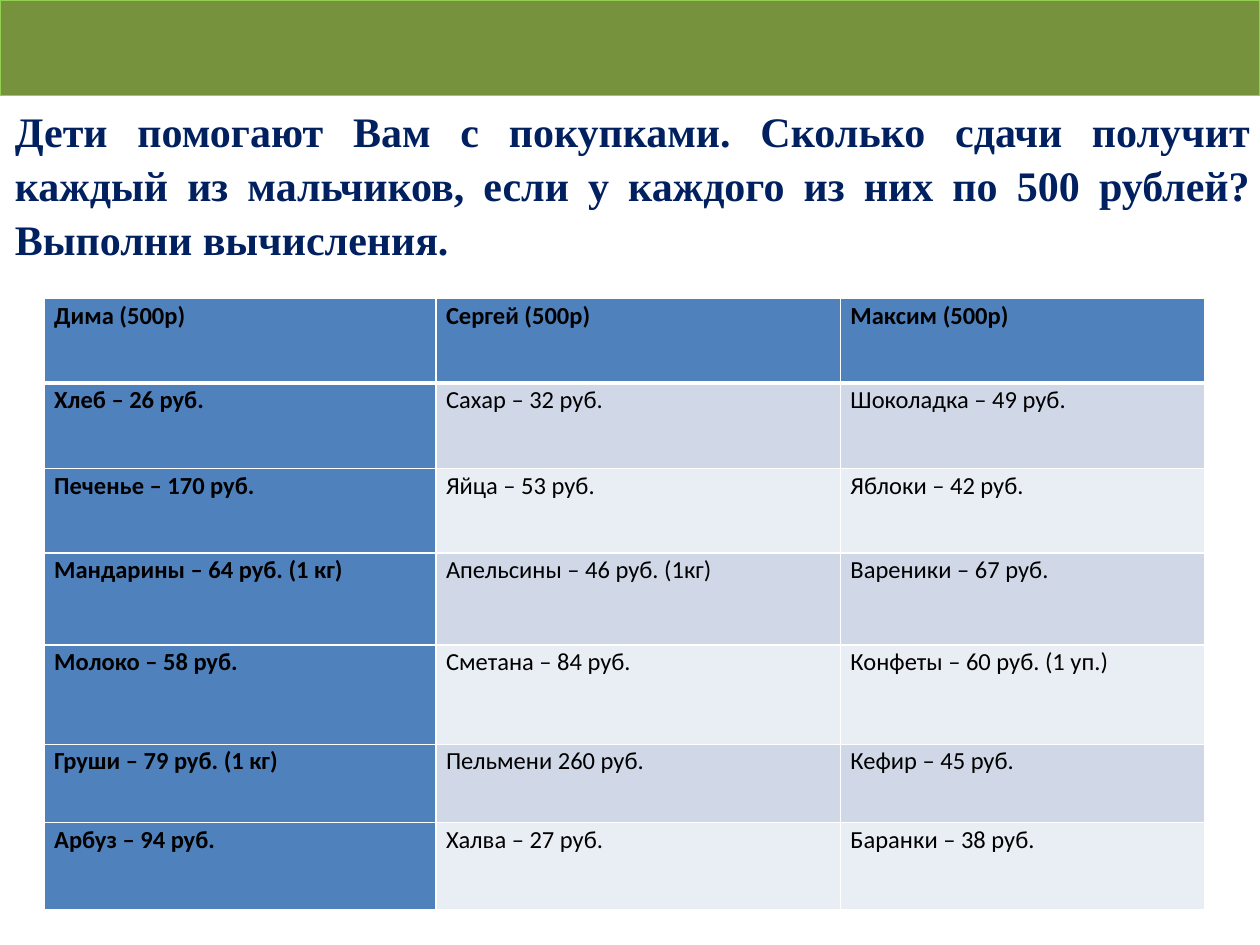
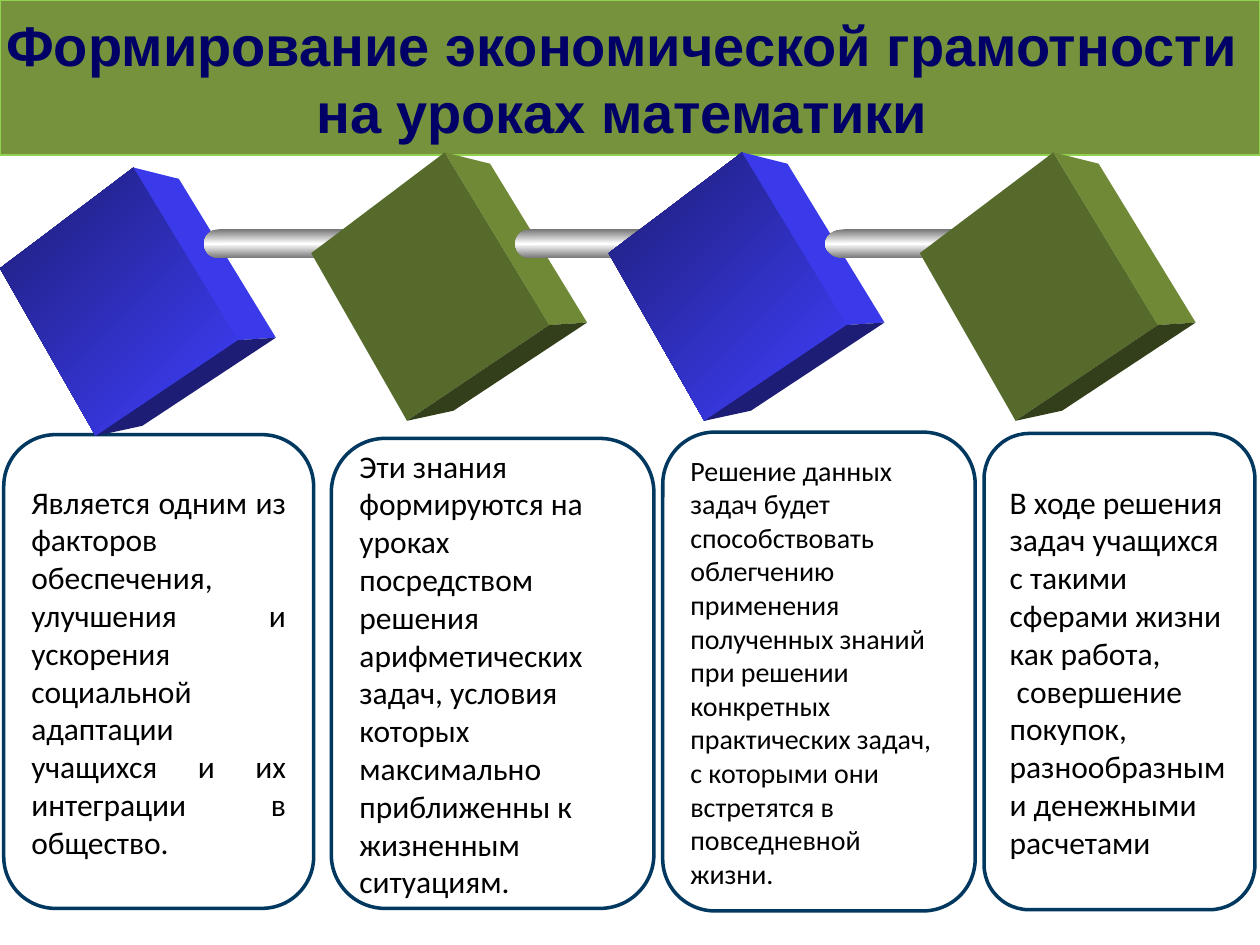
from copy import deepcopy

from lxml import etree
from pptx import Presentation
from pptx.dml.color import RGBColor
from pptx.enum.shapes import MSO_SHAPE
from pptx.enum.text import MSO_ANCHOR, PP_ALIGN
from pptx.oxml.ns import qn
from pptx.util import Inches, Pt

RECT, ROUNDED, ELLIPSE = MSO_SHAPE.RECTANGLE, MSO_SHAPE.ROUNDED_RECTANGLE, MSO_SHAPE.OVAL
LEFT, CENTER, JUSTIFY = PP_ALIGN.LEFT, PP_ALIGN.CENTER, PP_ALIGN.JUSTIFY
MIDDLE = MSO_ANCHOR.MIDDLE

WHITE, BLACK = "FFFFFF", "000000"
BAND_GREEN, BAND_EDGE = "76923C", "92D050"
TASK_NAVY, TITLE_NAVY, CARD_EDGE = "002060", "000066", "003860"
TABLE_BLUE, ROW_TINTS = "4F81BD", ("D0D8E8", "E9EDF4")
METAL = ("767676", "FFFFFF", "767676")
# Colours of the front, right and bottom faces
BLUE_CUBE = (("1D1D76", "3F3FFF"), "3A3AEB", "1D1D76")
GREEN_CUBE = ("566B2B", "6F8936", "333F1A")
CUBE_FACES = (
    ((1.06, 0), (0, 0.8), (0.76, 2.13), (1.89, 1.37)),
    ((1.06, 0), (1.42, 0.09), (2.19, 1.35), (1.89, 1.37)),
    ((1.89, 1.37), (2.19, 1.35), (1.13, 2.05), (0.76, 2.13)),
)

TASK = ("Дети помогают Вам с покупками. Сколько сдачи получит каждый из мальчиков, "
        "если у каждого из них по 500 рублей? Выполни вычисления.")
PURCHASES = (
    ("Дима (500р)", "Сергей (500р)", "Максим (500р)"),
    ("Хлеб – 26 руб.", "Сахар – 32 руб.", "Шоколадка – 49 руб."),
    ("Печенье – 170 руб.", "Яйца – 53 руб.", "Яблоки – 42 руб."),
    ("Мандарины – 64 руб. (1 кг)", "Апельсины – 46 руб. (1кг)", "Вареники – 67 руб."),
    ("Молоко – 58 руб.", "Сметана – 84 руб.", "Конфеты – 60 руб. (1 уп.)"),
    ("Груши – 79 руб. (1 кг)", "Пельмени 260 руб.", "Кефир – 45 руб."),
    ("Арбуз – 94 руб.", "Халва – 27 руб.", "Баранки – 38 руб."),
)
COLUMN_WIDTHS = (3.11, 3.21, 2.89)
ROW_HEIGHTS = (0.67, 0.68, 0.67, 0.73, 0.79, 0.62, 0.69)

TITLE = ("Формирование экономической грамотности ", "на уроках математики ")
# Box, text size, alignment, paragraphs
CARDS = (
    ((0.03, 3.45, 2.46, 3.76), 18, JUSTIFY,
     ("Является одним из факторов обеспечения, улучшения и ускорения социальной "
      "адаптации учащихся и их интеграции в общество.",)),
    ((2.63, 3.48, 2.56, 3.73), 18, LEFT,
     ("Эти знания формируются на уроках посредством решения арифметических задач, "
      "условия которых максимально приближенны к жизненным ситуациям.",)),
    ((5.26, 3.43, 2.48, 3.8), 16, LEFT,
     ("Решение данных задач будет способствовать облегчению применения полученных "
      "знаний при решении конкретных практических задач, с которыми они встретятся "
      "в повседневной жизни.",)),
    ((7.81, 3.44, 2.15, 3.78), 18, LEFT,
     ("В ходе решения задач учащихся с такими сферами жизни как работа,",
      " совершение покупок, разнообразными денежными расчетами")),
)
CUBES = ((0, 1.33, BLUE_CUBE), (2.47, 1.21, GREEN_CUBE),
         (4.83, 1.21, BLUE_CUBE), (7.3, 1.21, GREEN_CUBE))
# Left edge, cap width, tube length
RODS = ((1.62, 0.23, 1.11), (4.09, 0.23, 1.11), (6.55, 0.3, 1.45))


def color(hex_code):
    return RGBColor.from_string(hex_code)


def fill_gradient(shape, colors, angle):
    shape.fill.gradient()
    shape.fill.gradient_angle = angle
    stop_list = shape._element.spPr.find(".//" + qn("a:gsLst"))
    while len(stop_list) < len(colors):
        stop_list.append(deepcopy(stop_list[0]))
    for i, (stop, hex_code) in enumerate(zip(shape.fill.gradient_stops, colors)):
        stop.position = i / (len(colors) - 1)
        stop.color.rgb = color(hex_code)


def paint(shape, fill, edge=None, edge_width=0.75, angle=270):
    """Fill with one colour, or with a gradient when given several."""
    shape.shadow.inherit = False
    if isinstance(fill, str):
        shape.fill.solid()
        shape.fill.fore_color.rgb = color(fill)
    else:
        fill_gradient(shape, fill, angle)
    if edge:
        shape.line.color.rgb = color(edge)
        shape.line.width = Pt(edge_width)
    else:
        shape.line.fill.background()


def add_painted(slide, kind, box, fill, edge=None, edge_width=0.75):
    shape = slide.shapes.add_shape(kind, *map(Inches, box))
    paint(shape, fill, edge, edge_width)
    return shape


def write(frame, texts, font, size, hex_code, bold=False, align=LEFT, spacing=None):
    for i, text in enumerate(texts):
        paragraph = frame.add_paragraph() if i else frame.paragraphs[0]
        paragraph.text = text
        paragraph.alignment = align
        paragraph.line_spacing = spacing
        paragraph.font.name = font
        paragraph.font.size = Pt(size)
        paragraph.font.bold = bold
        paragraph.font.color.rgb = color(hex_code)


def add_band(slide, height):
    return add_painted(slide, RECT, (0, 0, 10, height), BAND_GREEN, BAND_EDGE)


def set_borders(cell, top, bottom):
    properties = cell._tc.get_or_add_tcPr()
    for i, (side, width) in enumerate((("L", 1), ("R", 1), ("T", top), ("B", bottom))):
        line = etree.Element(qn("a:ln" + side), w=str(Pt(width)))
        fill = etree.SubElement(line, qn("a:solidFill"))
        etree.SubElement(fill, qn("a:srgbClr"), val=WHITE)
        properties.insert(i, line)


def add_purchases(slide, box):
    table = slide.shapes.add_table(len(PURCHASES), len(COLUMN_WIDTHS), *map(Inches, box)).table
    for column, width in zip(table.columns, COLUMN_WIDTHS):
        column.width = Inches(width)
    for r, (row, height) in enumerate(zip(PURCHASES, ROW_HEIGHTS)):
        table.rows[r].height = Inches(height)
        for c, text in enumerate(row):
            cell = table.cell(r, c)
            heading = r == 0 or c == 0
            cell.margin_left = cell.margin_right = Inches(0.08)
            cell.margin_top = cell.margin_bottom = 0
            cell.fill.solid()
            cell.fill.fore_color.rgb = color(TABLE_BLUE if heading else ROW_TINTS[(r - 1) % 2])
            set_borders(cell, 3 if r == 1 else 1, 3 if r == 0 else 1)
            write(cell.text_frame, [text], "Calibri", 14, BLACK, heading,
                  LEFT if r else JUSTIFY, 1.07)


def add_card(slide, box, size, align, texts):
    frame = add_painted(slide, ROUNDED, box, WHITE, CARD_EDGE, 2).text_frame
    frame.word_wrap = True
    frame.vertical_anchor = MIDDLE
    write(frame, texts, "Calibri", size, BLACK, align=align)


def add_cube(slide, left, top, face_colors):
    for corners, fill in zip(CUBE_FACES, face_colors):
        points = [(Inches(left + x), Inches(top + y)) for x, y in corners]
        builder = slide.shapes.build_freeform(*points[0])
        builder.add_line_segments(points[1:])
        paint(builder.convert_to_shape(), fill, angle=315)


def add_rod(slide, left, cap_width, length):
    top, height = 1.82, 0.23
    add_painted(slide, ELLIPSE, (left, top, cap_width, height), METAL)
    add_painted(slide, RECT, (left + cap_width / 2, top, length, height), METAL)


def build_shopping_slide(slide):
    add_band(slide, 0.76)
    frame = slide.shapes.add_textbox(*map(Inches, (0.02, 0.76, 10, 1.61))).text_frame
    frame.word_wrap = True
    write(frame, [TASK], "Times New Roman", 24, TASK_NAVY, True, JUSTIFY, 1.07)
    add_purchases(slide, (0.35, 2.37, sum(COLUMN_WIDTHS), sum(ROW_HEIGHTS)))


def build_literacy_slide(slide):
    frame = add_band(slide, 1.23).text_frame
    frame.word_wrap = False
    frame.vertical_anchor = MIDDLE
    write(frame, TITLE, "Arial", 32, TITLE_NAVY, True, CENTER)
    for card in CARDS:
        add_card(slide, *card)
    # Each rod starts on one cube and ends behind the next
    for i, cube in enumerate(CUBES):
        add_cube(slide, *cube)
        if i < len(RODS):
            add_rod(slide, *RODS[i])


def main():
    deck = Presentation()
    deck.slide_width, deck.slide_height = Inches(10), Inches(7.5)
    blank = deck.slide_layouts[6]
    for build in (build_shopping_slide, build_literacy_slide):
        build(deck.slides.add_slide(blank))
    deck.save("out.pptx")


if __name__ == "__main__":
    main()
